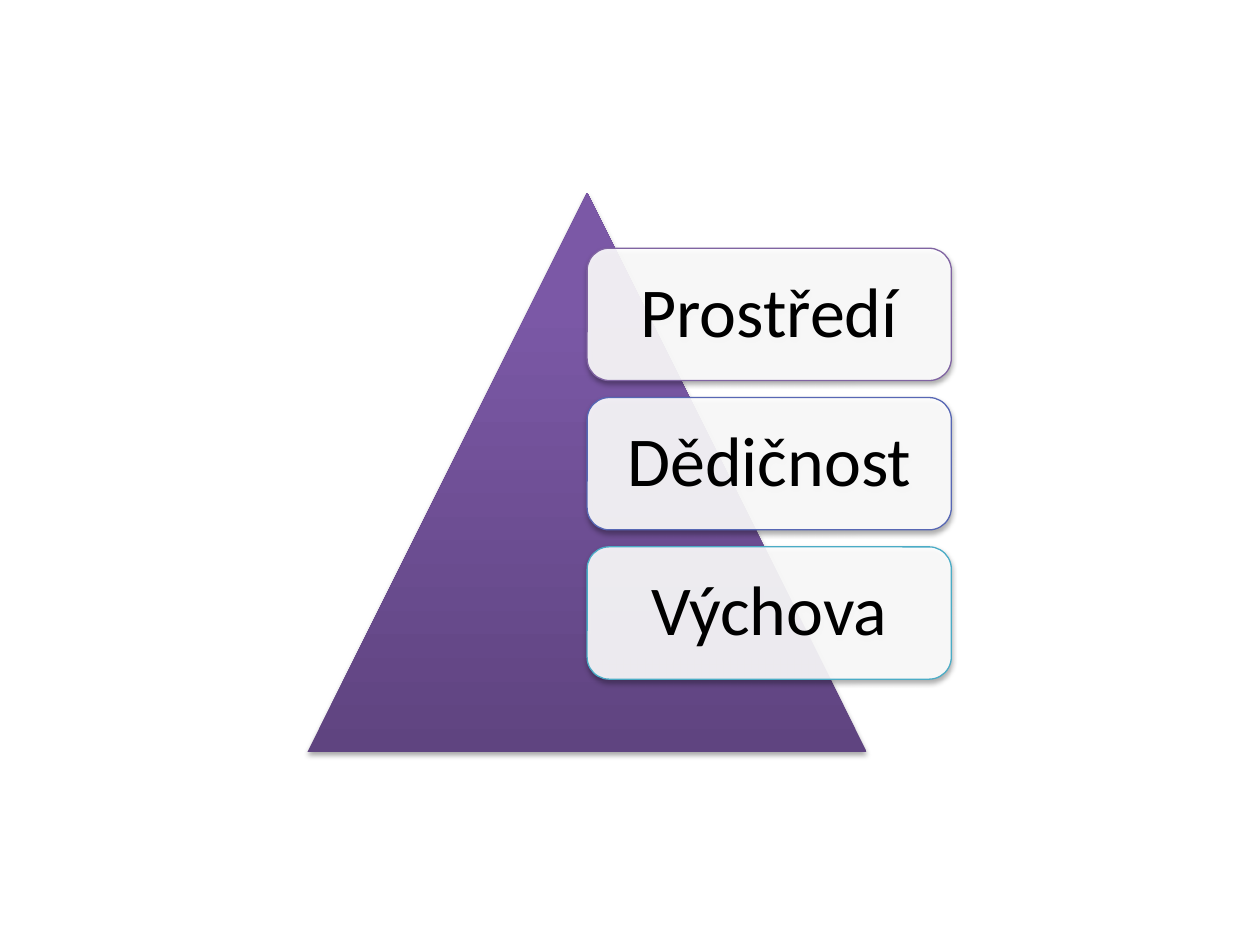
from copy import deepcopy
from dataclasses import dataclass

from lxml.etree import SubElement
from pptx import Presentation
from pptx.dml.color import RGBColor
from pptx.enum.shapes import MSO_SHAPE
from pptx.enum.text import MSO_ANCHOR, PP_ALIGN
from pptx.oxml.ns import qn
from pptx.util import Inches, Pt


@dataclass(frozen=True)
class Theme:
    """Colours, type and line sizes of the slide."""
    font: str = "Calibri"
    size: float = 40
    text: str = "000000"
    card: str = "FFFFFF"
    shade: str = "000000"
    line: float = 0.75
    edges: tuple = ("8064A2", "5767B4", "4BACC6")
    stops: tuple = ((0, "5F4480"), (80, "7B58A6"), (100, "7C57A8"))


THEME = Theme()
SIDE, LEFT, TOP = 4.44, 2.44, 1.53
WIDE, HIGH, STEP = 2.89, 1.05, 1.185
FIRST = 1.97
INSET = 0.22


def rgb(code):
    """Turn a hex code into a colour."""
    return RGBColor.from_string(code)


def add_form(group, kind, *box):
    """Add a preset shape at a box in inches."""
    return group.shapes.add_shape(kind, *map(Inches, box))


def fade(color, share):
    """Give a colour element an opacity in percent."""
    SubElement(color, qn("a:alpha"), val=str(share * 1000))


def cast(shape):
    """Add a soft shadow below a shape."""
    shape.shadow.inherit = False
    effects = shape._element.spPr.find(qn("a:effectLst"))
    outer = SubElement(effects, qn("a:outerShdw"), blurRad=str(Pt(3.1)),
                       dist=str(Pt(1.8)), dir="5400000", rotWithShape="0")
    fade(SubElement(outer, qn("a:srgbClr"), val=THEME.shade), 35)


def add_peak(group):
    """Add the triangle with its upward gradient."""
    peak = add_form(group, MSO_SHAPE.ISOSCELES_TRIANGLE, LEFT, TOP, SIDE, SIDE)
    peak.fill.gradient()
    peak.fill.gradient_angle = 90
    stops = peak._element.spPr.find(".//" + qn("a:gsLst"))
    stops.insert(1, deepcopy(stops[0]))
    for stop, (share, code) in zip(peak.fill.gradient_stops, THEME.stops):
        stop.position = share / 100
        stop.color.rgb = rgb(code)
    peak.line.fill.background()
    cast(peak)


def add_card(group, row, label, edge):
    """Add a rounded card with its label in a row."""
    card = add_form(group, MSO_SHAPE.ROUNDED_RECTANGLE,
                    LEFT + SIDE / 2, FIRST + row * STEP, WIDE, HIGH)
    card.fill.solid()
    card.fill.fore_color.rgb = rgb(THEME.card)
    fade(card._element.spPr.find(".//" + qn("a:srgbClr")), 90)
    card.line.color.rgb = rgb(edge)
    card.line.width = Pt(THEME.line)
    cast(card)
    frame = card.text_frame
    frame.word_wrap = True
    frame.vertical_anchor = MSO_ANCHOR.MIDDLE
    frame.margin_left = frame.margin_right = Inches(INSET)
    frame.margin_top = frame.margin_bottom = Inches(INSET)
    para = frame.paragraphs[0]
    para.alignment = PP_ALIGN.CENTER
    para.line_spacing = 0.9
    run = para.add_run()
    run.text = label
    run.font.name = THEME.font
    run.font.size = Pt(THEME.size)
    run.font.color.rgb = rgb(THEME.text)


def main():
    """Build and save the slide."""
    deck = Presentation()
    deck.slide_width, deck.slide_height = Inches(10), Inches(7.5)
    slide = deck.slides.add_slide(deck.slide_layouts[6])
    group = slide.shapes.add_group_shape()
    add_peak(group)
    labels = ("Prostředí", "Dědičnost", "Výchova")
    for row, (label, edge) in enumerate(zip(labels, THEME.edges)):
        add_card(group, row, label, edge)
    deck.save("out.pptx")


if __name__ == "__main__":
    main()
